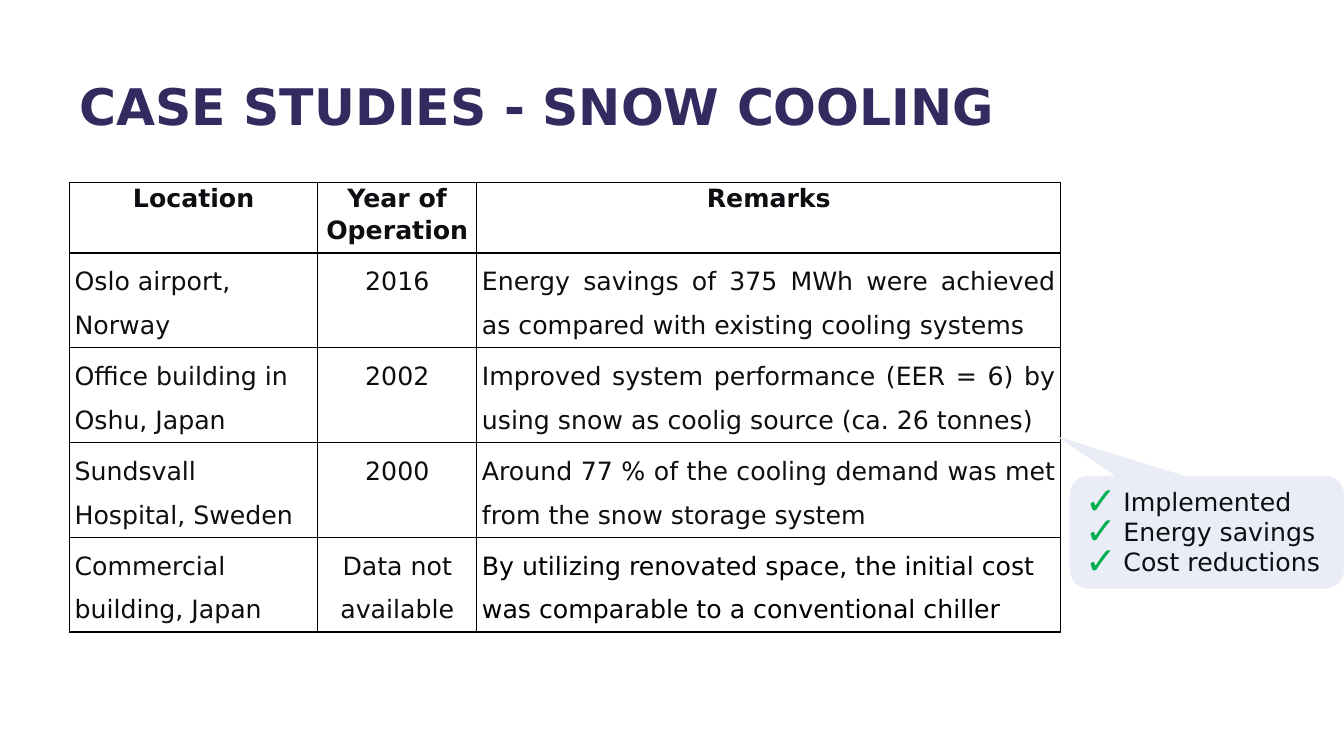
from lxml.etree import SubElement
from pptx import Presentation
from pptx.dml.color import RGBColor
from pptx.enum.shapes import MSO_SHAPE
from pptx.enum.text import MSO_ANCHOR, PP_ALIGN as ALIGN
from pptx.oxml import parse_xml
from pptx.oxml.ns import nsdecls, qn
from pptx.util import Inches, Pt

FONT = "DejaVu Sans"
PURPLE = RGBColor(0x34, 0x2A, 0x5F)
INK = RGBColor(0x0D, 0x0E, 0x12)
BLACK = RGBColor(0, 0, 0)
PALE = RGBColor(0xEB, 0xED, 0xF6)
GREEN = RGBColor(0x00, 0xB0, 0x50)

HEADER = ["Location", "Year of Operation", "Remarks"]
CASES = [
    ["Oslo airport, Norway", "2016",
     "Energy savings of 375 MWh were achieved as compared with existing cooling systems"],
    ["Office building in Oshu, Japan", "2002",
     "Improved system performance (EER = 6) by using snow as coolig source (ca. 26 tonnes)"],
    ["Sundsvall Hospital, Sweden", "2000",
     "Around 77 % of the cooling demand was met from the snow storage system"],
    ["Commercial building, Japan", "Data not available",
     "By utilizing renovated space, the initial cost was comparable to a conventional chiller"],
]
COL_WIDTHS = [2.46, 1.58, 5.79]
ROW_HEIGHTS = [0.7] + [0.94] * len(CASES)
BENEFITS = ["Implemented", "Energy savings", "Cost reductions"]


def add_run(p, text, size=18, color=INK, bold=False):
    r = p.add_run()
    r.text = text
    r.font.name = FONT
    r.font.size = Pt(size)
    r.font.bold = bold
    r.font.color.rgb = color


def add_title(s, text):
    tf = s.shapes.add_textbox(Inches(0.69), Inches(0.36), Inches(10.43), Inches(1.45)).text_frame
    tf.word_wrap = True
    tf.vertical_anchor = MSO_ANCHOR.MIDDLE
    p = tf.paragraphs[0]
    p.line_spacing = 0.9
    add_run(p, text, 36, PURPLE, True)


def add_borders(cell):
    tcPr = cell._tc.get_or_add_tcPr()
    for i, side in enumerate(("lnL", "lnR", "lnT", "lnB")):
        tcPr.insert(i, parse_xml(
            f'<a:{side} {nsdecls("a")} w="{Pt(1)}"><a:solidFill>'
            f'<a:srgbClr val="{BLACK}"/></a:solidFill></a:{side}>'))


def fill_cell(cell, text, align, line_spacing, space_after, color=INK, bold=False):
    cell.margin_left = cell.margin_right = Inches(0.05)
    cell.margin_top = cell.margin_bottom = 0
    cell.fill.background()
    add_borders(cell)
    p = cell.text_frame.paragraphs[0]
    p.alignment = align
    p.line_spacing = line_spacing
    p.space_after = Pt(space_after)
    add_run(p, text, color=color, bold=bold)


def add_case_table(s):
    table = s.shapes.add_table(
        len(ROW_HEIGHTS), len(COL_WIDTHS), Inches(0.69), Inches(1.81),
        Inches(sum(COL_WIDTHS)), Inches(sum(ROW_HEIGHTS))).table
    table.first_row = table.horz_banding = False
    for col, width in zip(table.columns, COL_WIDTHS):
        col.width = Inches(width)
    for row, height in zip(table.rows, ROW_HEIGHTS):
        row.height = Inches(height)

    for c, text in enumerate(HEADER):
        fill_cell(table.cell(0, c), text, ALIGN.CENTER, 1.07, 10, bold=True)
    aligns = [ALIGN.LEFT, ALIGN.CENTER, ALIGN.JUSTIFY]
    for r, case in enumerate(CASES, 1):
        for c, text in enumerate(case):
            # The closing remark is black and left-aligned
            if r == len(CASES) and c == 2:
                fill_cell(table.cell(r, c), text, ALIGN.LEFT, 1.5, 0, BLACK)
            else:
                fill_cell(table.cell(r, c), text, aligns[c], 1.5, 10)


def add_check_bullet(p):
    pPr = p._p.get_or_add_pPr()
    pPr.set("marL", str(Inches(0.38)))
    pPr.set("indent", str(-Inches(0.38)))
    SubElement(SubElement(pPr, qn("a:buClr")), qn("a:srgbClr"), val=str(GREEN))
    SubElement(pPr, qn("a:buSzPct"), val="150000")
    SubElement(pPr, qn("a:buFont"), typeface=FONT)
    SubElement(pPr, qn("a:buChar"), char="✓")


def add_callout(s, items):
    sp = s.shapes.add_shape(MSO_SHAPE.ROUNDED_RECTANGULAR_CALLOUT,
                            Inches(10.61), Inches(4.72), Inches(2.72), Inches(1.12))
    for i, value in enumerate((-0.548, -0.85, 0.167)):
        sp.adjustments[i] = value
    sp.shadow.inherit = False
    sp.fill.solid()
    sp.fill.fore_color.rgb = PALE
    sp.line.fill.background()
    tf = sp.text_frame
    tf.word_wrap = True
    tf.vertical_anchor = MSO_ANCHOR.TOP
    for i, item in enumerate(items):
        p = tf.add_paragraph() if i else tf.paragraphs[0]
        p.alignment = ALIGN.LEFT
        add_check_bullet(p)
        add_run(p, item)


def main():
    prs = Presentation()
    prs.slide_width, prs.slide_height = Inches(13.33), Inches(7.5)
    s = prs.slides.add_slide(prs.slide_layouts[6])
    add_title(s, "CASE STUDIES - SNOW COOLING")
    add_case_table(s)
    add_callout(s, BENEFITS)
    prs.save("out.pptx")


if __name__ == "__main__":
    main()
